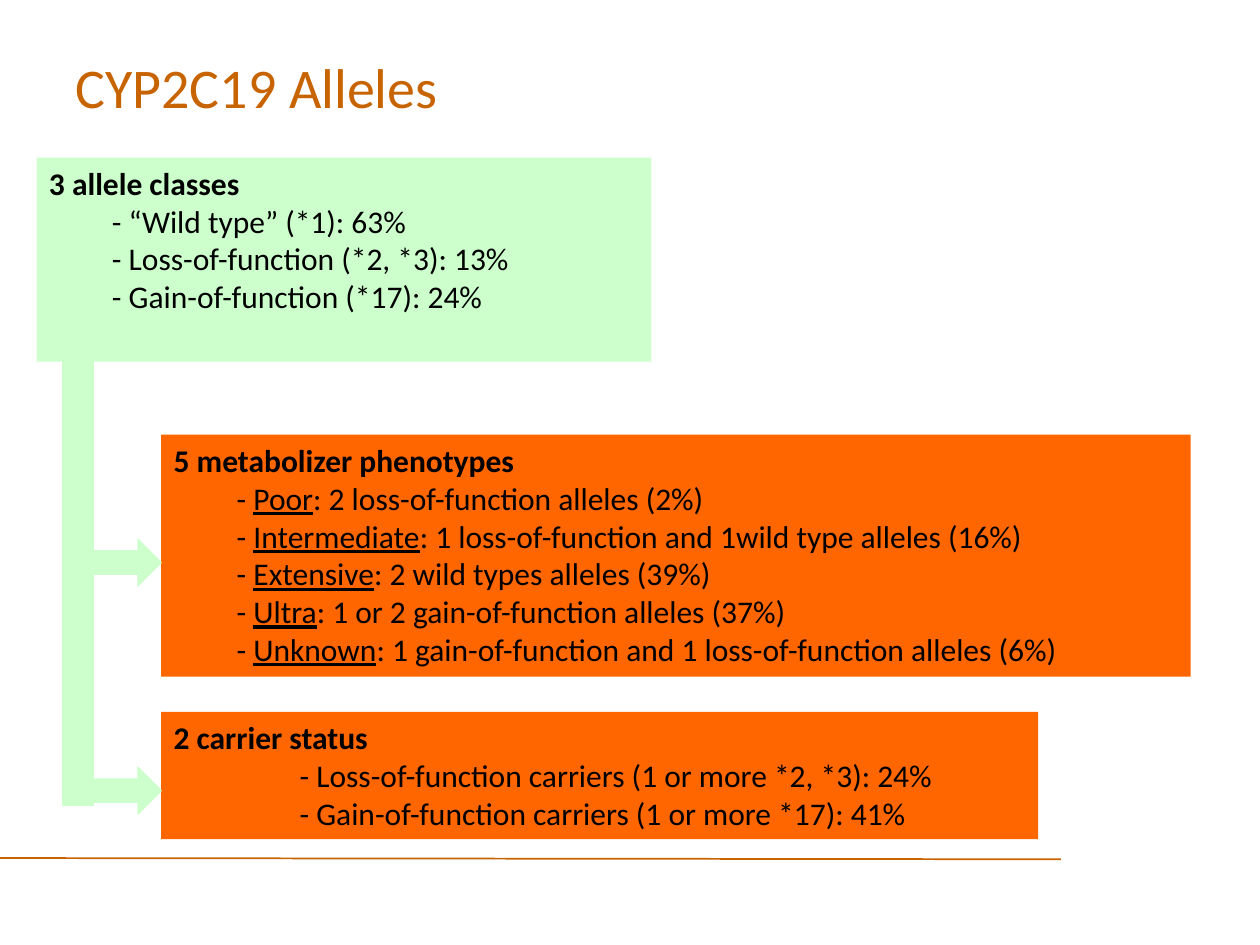
"""Build the CYP2C19 alleles slide."""
from lxml.etree import SubElement
from pptx import Presentation
from pptx.dml.color import RGBColor
from pptx.enum.shapes import MSO_CONNECTOR, MSO_SHAPE
from pptx.enum.text import MSO_ANCHOR
from pptx.oxml.ns import qn
from pptx.util import Inches, Pt

HUES = {"title": "C86400", "green": "CCFFCC", "orange": "FF6600", "text": "000000"}


def write(para, text, size=18, hue="text", bold=False, under=False, indent=0):
    if indent:
        props = para._p.get_or_add_pPr()
        props.set("marL", str(Inches(indent)))
        props.set("indent", "0")
    run = para.add_run()
    run.text = text
    font = run.font
    font.name, font.size = "Calibri", Pt(size)
    font.bold, font.underline = bold, under
    font.color.rgb = RGBColor.from_string(HUES[hue])


def block(kind, hue, *place):
    shape = slide.shapes.add_shape(kind, *map(Inches, place))
    shape.shadow.inherit = False
    shape.fill.solid()
    shape.fill.fore_color.rgb = RGBColor.from_string(HUES[hue])
    shape.line.fill.background()
    return shape


deck = Presentation()
deck.slide_width, deck.slide_height = Inches(10), Inches(7.5)
slide = deck.slides.add_slide(deck.slide_layouts[6])

rule = slide.shapes.add_connector(
    MSO_CONNECTOR.STRAIGHT, Inches(8.42), Inches(6.82), Inches(0), Inches(6.81))
rule.line.color.rgb = RGBColor.from_string(HUES["title"])
rule.line.width = Pt(1)
SubElement(rule._element.spPr, qn("a:effectLst"))

title = slide.shapes.add_textbox(Inches(0.5), Inches(0.3), Inches(9), Inches(0.77))
title.text_frame.word_wrap = True
title.text_frame.vertical_anchor = MSO_ANCHOR.MIDDLE
write(title.text_frame.paragraphs[0], "CYP2C19 Alleles", size=32, hue="title")

panels = [
    ("green", (0.29, 1.25, 4.88, 1.62), "3 allele classes", 0.5, [
        ("", "“Wild type” (*1): 63%"),
        ("", "Loss-of-function (*2, *3): 13%"),
        ("", "Gain-of-function (*17): 24%")]),
    ("orange", (1.28, 3.45, 8.17, 1.92), "5 metabolizer phenotypes", 0.5, [
        ("Poor", ": 2 loss-of-function alleles (2%)"),
        ("Intermediate", ": 1 loss-of-function and 1wild type alleles (16%)"),
        ("Extensive", ": 2 wild types alleles (39%)"),
        ("Ultra", ": 1 or 2 gain-of-function alleles (37%)"),
        ("Unknown", ": 1 gain-of-function and 1 loss-of-function alleles (6%)")]),
    ("orange", (1.28, 5.65, 6.96, 1.01), "2 carrier status", 1, [
        ("", "Loss-of-function carriers (1 or more *2, *3): 24%"),
        ("", "Gain-of-function carriers (1 or more *17): 41%")]),
]
for hue, place, head, indent, items in panels:
    frame = block(MSO_SHAPE.RECTANGLE, hue, *place).text_frame
    frame.word_wrap = True
    frame.vertical_anchor = MSO_ANCHOR.TOP
    first = frame.paragraphs[0]
    first.alignment = 1
    write(first, head, bold=True)
    for term, rest in items:
        para = frame.add_paragraph()
        para.alignment = 1
        if term:
            write(para, "- ", indent=indent)
            write(para, term, under=True)
            write(para, rest)
        else:
            write(para, "- " + rest, indent=indent)

parts = [(MSO_SHAPE.RIGHT_ARROW, 0.74, top, 0.54, 0.37) for top in (4.28, 6.09)]
parts.append((MSO_SHAPE.RECTANGLE, 0.5, 2.87, 0.24, 3.52))
for kind, *place in parts:
    part = block(kind, "green", *place)
    part.line.color.rgb = RGBColor.from_string(HUES["green"])
    part.line.width = Pt(0.75)

deck.save("out.pptx")
